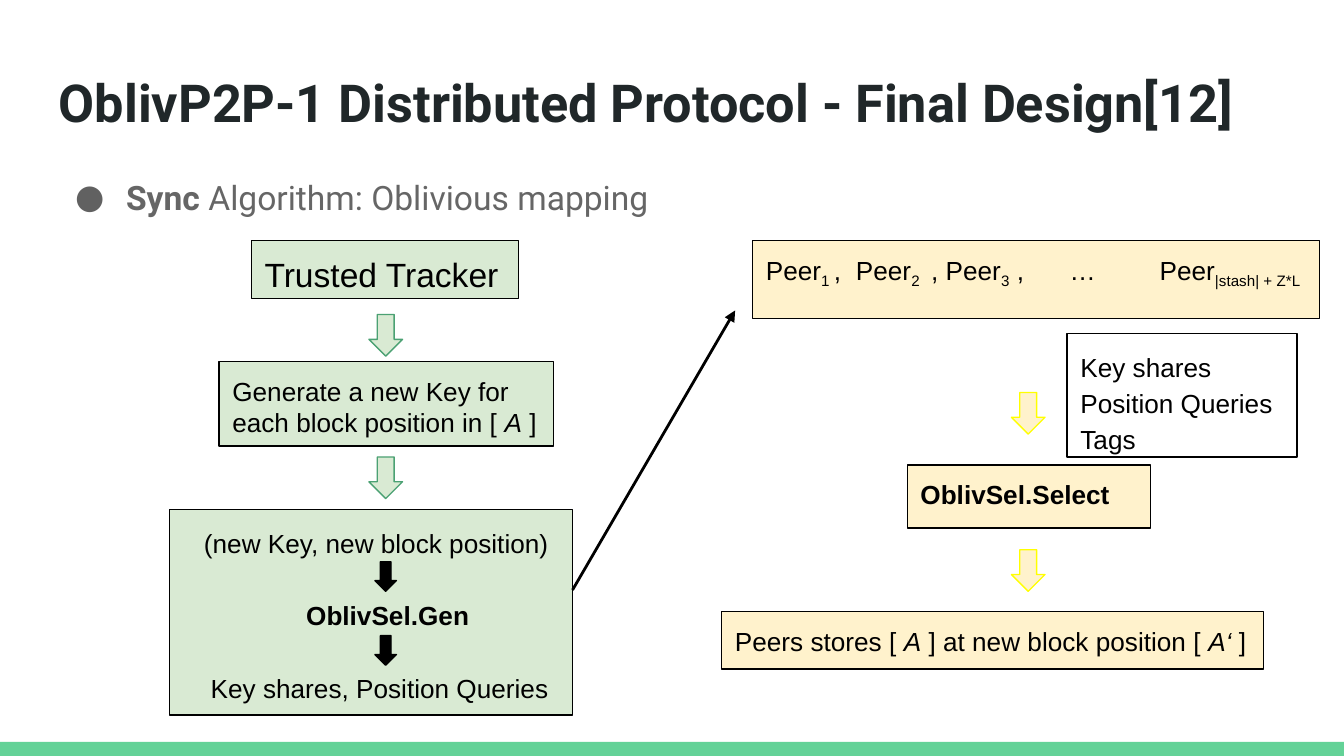
from lxml.etree import SubElement
from pptx import Presentation
from pptx.dml.color import RGBColor
from pptx.enum.shapes import MSO_CONNECTOR, MSO_SHAPE
from pptx.enum.text import MSO_ANCHOR, PP_ALIGN
from pptx.oxml.ns import qn
from pptx.util import Inches, Pt

GREEN, YELLOW, BLACK = "D9EAD3", "FFF2CC", "000000"
ITALIC, BOLD, SUB = "italic", "bold", "subscript"


def color(hex_value):
    return RGBColor.from_string(hex_value)


def paint(shape, fill=None, line=None):
    shape.shadow.inherit = False
    if fill:
        shape.fill.solid()
        shape.fill.fore_color.rgb = color(fill)
    else:
        shape.fill.background()
    if line:
        shape.line.color.rgb = color(line)
        shape.line.width = Pt(0.75)
    else:
        shape.line.fill.background()


def write(shape, lines, size=14, font="Arial", ink=BLACK, spacing=None):
    frame = shape.text_frame
    frame.word_wrap = True
    frame.vertical_anchor = MSO_ANCHOR.TOP
    frame.margin_left = frame.margin_right = Inches(0.1)
    frame.margin_top = frame.margin_bottom = Inches(0.1)
    for index, pieces in enumerate(lines):
        paragraph = frame.add_paragraph() if index else frame.paragraphs[0]
        paragraph.alignment = PP_ALIGN.LEFT
        if spacing:
            paragraph.line_spacing = spacing
        for text, style in pieces:
            run = paragraph.add_run()
            run.text = text
            run.font.size = Pt(size)
            run.font.name = font
            run.font.color.rgb = color(ink)
            run.font.bold = style == BOLD
            run.font.italic = style == ITALIC
            if style == SUB:
                run.font._element.set("baseline", "-25000")
    return frame.paragraphs


def indent(paragraph, left, first=0):
    properties = paragraph._p.get_or_add_pPr()
    properties.set("marL", str(Inches(left)))
    properties.set("indent", str(Inches(first)))
    return properties


def add_box(slide, left, top, width, height, fill, lines, **text_format):
    box = slide.shapes.add_shape(MSO_SHAPE.RECTANGLE, Inches(left), Inches(top),
                                 Inches(width), Inches(height))
    paint(box, fill, BLACK)
    return write(box, lines, **text_format)


def add_down_arrow(slide, center, top, fill, line, width=0.25, height=0.31):
    arrow = slide.shapes.add_shape(MSO_SHAPE.DOWN_ARROW, Inches(center - width / 2),
                                   Inches(top), Inches(width), Inches(height))
    paint(arrow, fill, line)


def add_heading(slide, left, top, width):
    title = slide.shapes.add_textbox(Inches(left), Inches(top), Inches(width), Inches(0.63))
    write(title, [[("OblivP2P-1 Distributed Protocol - Final Design[12]", BOLD)]],
          28, "Roboto", "202729")


def add_topic(slide, left, top, width, height):
    topic = slide.shapes.add_textbox(Inches(left), Inches(top), Inches(width), Inches(height))
    [sync] = write(topic, [[("Sync ", BOLD), ("Algorithm: Oblivious mapping", None)]],
                   18, "Roboto", "666666", 1.15)
    properties = indent(sync, 0.5, -0.38)
    bullet_color = SubElement(properties, qn("a:buClr"))
    SubElement(bullet_color, qn("a:srgbClr"), val="616161")
    SubElement(properties, qn("a:buFont"), typeface="Roboto")
    SubElement(properties, qn("a:buChar"), char="●")


def add_tracker_column(slide, left, top, width):
    center = left + width / 2
    add_box(slide, center - 0.89, top, 1.99, 0.43, GREEN,
            [[("Trusted Tracker", None)]], size=18)
    add_box(slide, center - 1.13, top + 0.9, 2.49, 0.63, GREEN,
            [[("Generate a new Key for each block position in [ ", None),
              ("A", ITALIC), (" ]", None)]])
    steps = add_box(slide, left, top + 2, width, 1.53, GREEN,
                    [[("(new Key, new block position)", None)],
                     [("OblivSel.Gen", BOLD)],
                     [("Key shares, Position Queries", None)]], spacing=1.15)
    for step, offset in zip(steps, (0.16, 0.92, 0.21)):
        indent(step, offset)
    for step in steps[1:]:
        step.space_before = Pt(19.5)

    flow = center + 0.11
    for offset in (0.55, 1.61):
        add_down_arrow(slide, flow, top + offset, GREEN, "4BA173")
    for offset in (2.39, 2.94):
        add_down_arrow(slide, flow, top + offset, BLACK, BLACK, 0.16, 0.22)


def add_peer_column(slide, left, top):
    [peers] = add_box(slide, left + 0.23, top, 4.22, 0.58, YELLOW,
                      [[("Peer", None), ("1 ", SUB), (",\tPeer", None), ("2", SUB),
                        ("\t, Peer", None), ("3", SUB), (" ,\t…\tPeer", None),
                        ("|stash| + Z*L", SUB)]])
    tabs = SubElement(peers._p.get_or_add_pPr(), qn("a:tabLst"))
    for position in (0.67, 1.23, 2.26, 2.93):
        SubElement(tabs, qn("a:tab"), pos=str(Inches(position)), algn="l")

    add_box(slide, left + 1.38, top + 1.67, 1.81, 0.47, YELLOW,
            [[("OblivSel.Select", BOLD)]])
    add_box(slide, left + 2.57, top + 0.69, 1.71, 0.92, None,
            [[(name, None)] for name in ("Key shares", "Position Queries", "Tags")],
            spacing=1.15)
    add_box(slide, left, top + 2.76, 4.03, 0.43, YELLOW,
            [[("Peers stores [ ", None), ("A", ITALIC),
              (" ] at new block position [ ", None), ("A‘", ITALIC), (" ]", None)]])
    for offset in (1.13, 2.3):
        add_down_arrow(slide, left + 2.28, top + offset, YELLOW, "FFFF00")


def add_handover(slide, start_x, start_y, end_x, end_y):
    handover = slide.shapes.add_connector(MSO_CONNECTOR.STRAIGHT, Inches(start_x),
                                          Inches(start_y), Inches(end_x), Inches(end_y))
    handover.line.color.rgb = color(BLACK)
    handover.line.width = Pt(1.5)
    SubElement(handover.line._get_or_add_ln(), qn("a:tailEnd"), type="triangle")
    SubElement(handover._element.spPr, qn("a:effectLst"))


def add_footer(slide, top, width, height):
    footer = slide.shapes.add_shape(MSO_SHAPE.RECTANGLE, 0, Inches(top),
                                    Inches(width), Inches(height))
    paint(footer, "63D297")


def main():
    deck = Presentation()
    deck.slide_width = Inches(10)
    deck.slide_height = deck.slide_width * 9 // 16
    slide = deck.slides.add_slide(deck.slide_layouts[6])
    add_footer(slide, 5.52, 10, 0.11)
    add_topic(slide, 0.34, 1.17, 9.56, 4.2)
    add_heading(slide, 0.34, 0.42, 9.56)
    add_tracker_column(slide, 1.26, 1.79, 3)
    add_peer_column(slide, 5.37, 1.79)
    add_handover(slide, 4.26, 4.39, 5.47, 2.31)
    deck.save("out.pptx")


if __name__ == "__main__":
    main()
